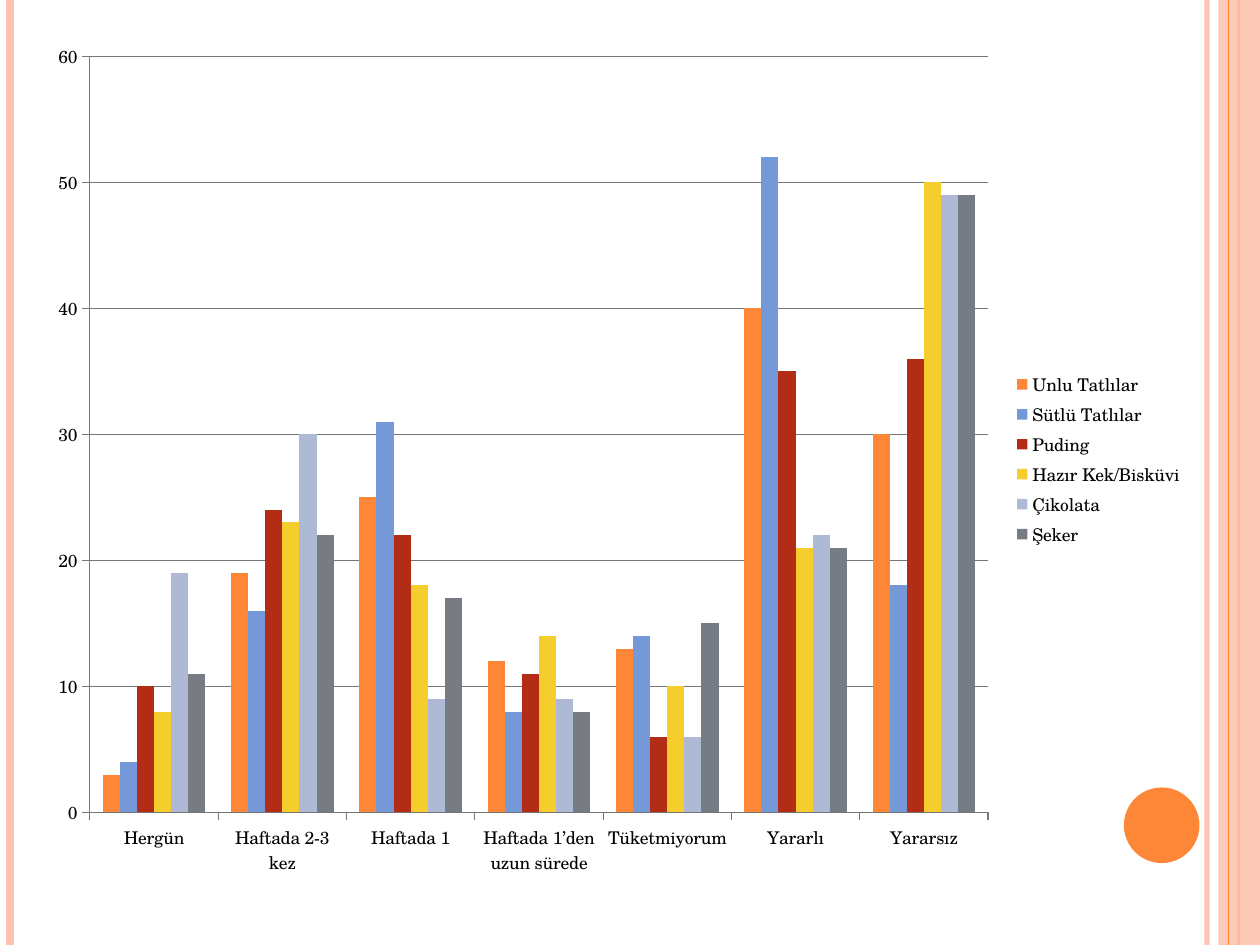
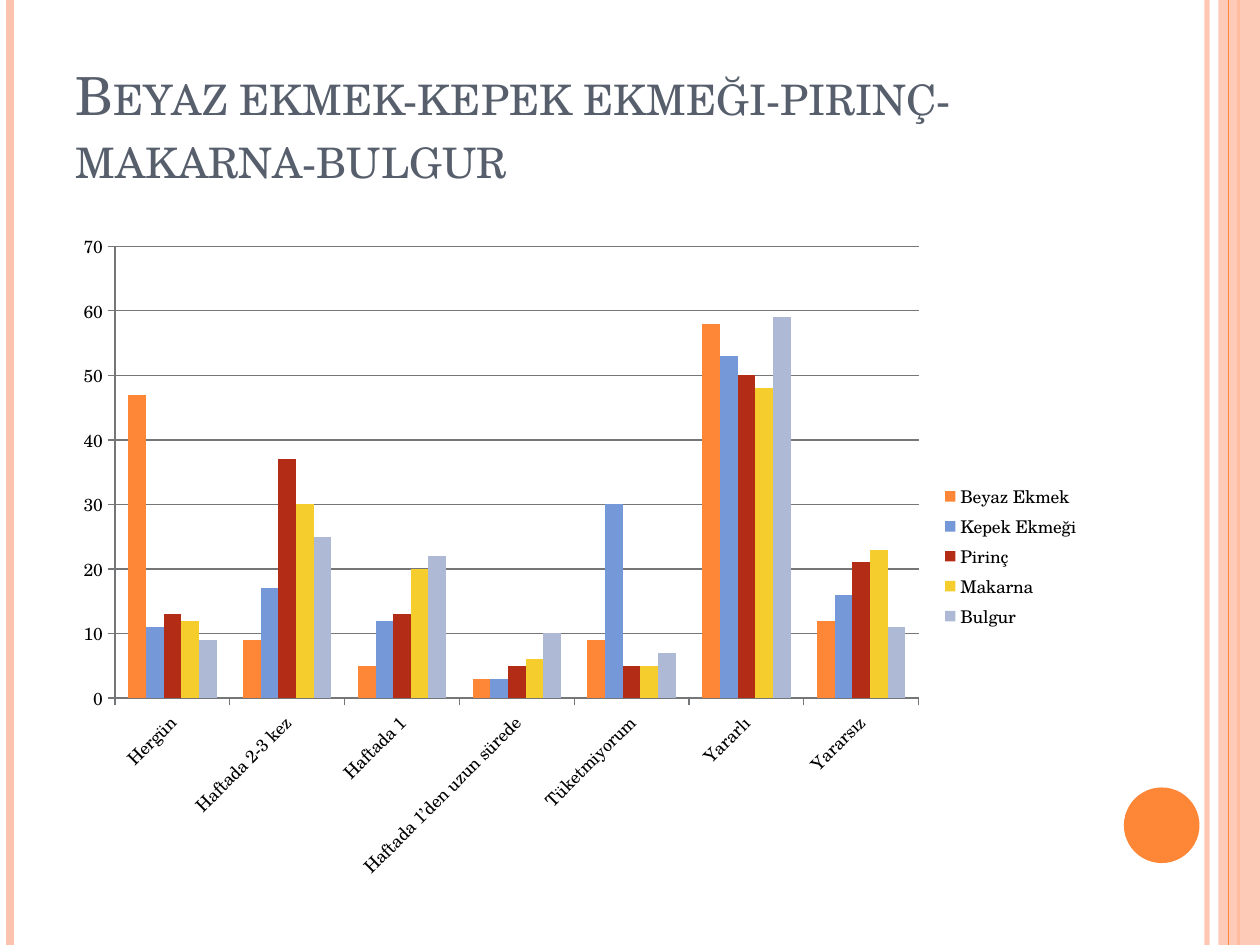
"""Build two slides with column charts of food consumption survey results."""
from lxml import etree
from pptx import Presentation
from pptx.chart.data import CategoryChartData
from pptx.dml.color import RGBColor
from pptx.enum.chart import XL_CHART_TYPE, XL_LEGEND_POSITION, XL_TICK_MARK
from pptx.enum.shapes import MSO_CONNECTOR, MSO_SHAPE
from pptx.enum.text import MSO_ANCHOR, MSO_AUTO_SIZE, PP_ALIGN
from pptx.oxml.ns import qn
from pptx.util import Inches, Pt

COLUMN = XL_CHART_TYPE.COLUMN_CLUSTERED
RIGHT = XL_LEGEND_POSITION.RIGHT
OUTSIDE = XL_TICK_MARK.OUTSIDE
STRAIGHT = MSO_CONNECTOR.STRAIGHT
RECTANGLE, OVAL = MSO_SHAPE.RECTANGLE, MSO_SHAPE.OVAL
BOTTOM, LEFT, NO_FIT = MSO_ANCHOR.BOTTOM, PP_ALIGN.LEFT, MSO_AUTO_SIZE.NONE

FONT = "TeX Gyre Schola"
COLORS = {
    "orange": "FE8637",
    "peach": "FEC3AE",
    "blue": "7598D9",
    "red": "B32C16",
    "yellow": "F5CD2D",
    "pale": "AEBAD5",
    "gray": "777C84",
    "title": "575F6D",
    "axis": "747678",
    "text": "000000",
}
SERIES_COLORS = ["orange", "blue", "red", "yellow", "pale", "gray"]
TITLE_ONLY, BLANK = 5, 6

CATEGORIES = ["Hergün", "Haftada 2-3 kez", "Haftada 1", "Haftada 1’den uzun sürede",
              "Tüketmiyorum", "Yararlı", "Yararsız"]
SWEETS = {
    "Unlu Tatlılar": [3, 19, 25, 12, 13, 40, 30],
    "Sütlü Tatlılar": [4, 16, 31, 8, 14, 52, 18],
    "Puding": [10, 24, 22, 11, 6, 35, 36],
    "Hazır Kek/Bisküvi": [8, 23, 18, 14, 10, 21, 50],
    "Çikolata": [19, 30, 9, 9, 6, 22, 49],
    "Şeker": [11, 22, 17, 8, 15, 21, 49],
}
GRAINS = {
    "Beyaz Ekmek": [47, 9, 5, 3, 9, 58, 12],
    "Kepek Ekmeği": [11, 17, 12, 3, 30, 53, 16],
    "Pirinç": [13, 37, 13, 5, 5, 50, 21],
    "Makarna": [12, 30, 20, 6, 5, 48, 23],
    "Bulgur": [9, 25, 22, 10, 7, 59, 11],
}


def rgb(name):
    """Return the named palette colour."""
    return RGBColor.from_string(COLORS[name])


def set_alpha(fill, percent):
    """Set the opacity of the solid colour inside an XML element."""
    color = next(fill.iter(qn("a:srgbClr")))
    etree.SubElement(color, qn("a:alpha")).set("val", str(percent * 1000))


def add_stripe(s, x, color, width, alpha=100):
    """Draw a full-height vertical line."""
    line = s.shapes.add_connector(STRAIGHT, Inches(x), 0, Inches(x), Inches(7.5))
    line.line.color.rgb = rgb(color)
    line.line.width = Pt(width)
    sp_pr = line._element.spPr
    if alpha < 100:
        set_alpha(sp_pr, alpha)
    etree.SubElement(sp_pr, qn("a:effectLst"))


def add_block(s, kind, box, color, alpha=100):
    """Draw a filled shape without outline or shadow."""
    sp = s.shapes.add_shape(kind, *map(Inches, box))
    sp.shadow.inherit = False
    sp.fill.solid()
    sp.fill.fore_color.rgb = rgb(color)
    sp.line.fill.background()
    if alpha < 100:
        set_alpha(sp._element.spPr, alpha)


def add_frame(s):
    """Draw the side stripes, the band and the circle shared by all slides."""
    add_stripe(s, 9.58, "peach", 3, 93)
    add_stripe(s, 0.08, "peach", 4.5)
    add_stripe(s, 9.83, "orange", 1.5)
    add_block(s, RECTANGLE, (9.67, 0, 0.33, 7.5), "peach", 87)
    add_stripe(s, 9.75, "orange", 0.75)
    add_block(s, OVAL, (8.92, 6.25, 0.6, 0.6), "orange")


def set_title(s, text):
    """Place and format the title in small capitals."""
    sp = s.shapes.title
    sp.left, sp.top, sp.width, sp.height = map(Inches, (0.5, 0.3, 8.17, 1.25))
    tf = sp.text_frame
    tf.text = text
    tf.word_wrap = True
    tf.auto_size = NO_FIT
    tf.vertical_anchor = BOTTOM
    p = tf.paragraphs[0]
    p.alignment = LEFT
    r = p.runs[0]
    r.font.name = FONT
    r.font.size = Pt(30)
    r.font.color.rgb = rgb("title")
    r.font._element.set("cap", "small")


def style_line(line):
    """Format an axis line or a gridline."""
    line.color.rgb = rgb("axis")
    line.width = Pt(0.75)


def add_column_chart(s, box, answers, label_angle=None):
    """Add a clustered column chart with a legend on the right."""
    data = CategoryChartData()
    data.categories = CATEGORIES
    for name, values in answers.items():
        data.add_series(name, values)
    chart = s.shapes.add_chart(COLUMN, *map(Inches, box), data).chart
    chart.has_title = False
    chart.font.name = FONT
    chart.font.size = Pt(10)
    chart.font.color.rgb = rgb("text")
    chart.has_legend = True
    chart.legend.position = RIGHT
    chart.legend.include_in_layout = False
    plot = chart.plots[0]
    plot.gap_width = 150
    plot.overlap = 0
    plot.vary_by_categories = False
    for series, color in zip(plot.series, SERIES_COLORS):
        series.format.fill.solid()
        series.format.fill.fore_color.rgb = rgb(color)
    for axis in (chart.category_axis, chart.value_axis):
        axis.major_tick_mark = OUTSIDE
        style_line(axis.format.line)
    chart.value_axis.has_major_gridlines = True
    style_line(chart.value_axis.major_gridlines.format.line)
    if label_angle is not None:
        labels = chart.category_axis.tick_labels
        labels.font.size = Pt(10)
        body = chart.category_axis._element.find(qn("c:txPr")).find(qn("a:bodyPr"))
        body.set("rot", str(label_angle * 60000))


def add_slide(prs, layout):
    """Add a slide with the shared frame."""
    s = prs.slides.add_slide(prs.slide_layouts[layout])
    add_frame(s)
    return s


def main():
    """Build and save the presentation."""
    prs = Presentation()
    prs.slide_width, prs.slide_height = Inches(10), Inches(7.5)

    s = add_slide(prs, BLANK)
    add_column_chart(s, (0.28, 0.21, 9.21, 6.87), SWEETS)

    s = add_slide(prs, TITLE_ONLY)
    set_title(s, "Beyaz ekmek-kepek ekmeği-pirinç-makarna-bulgur")
    add_column_chart(s, (0.5, 1.75, 8.17, 5.33), GRAINS, label_angle=-45)

    prs.save("out.pptx")


if __name__ == "__main__":
    main()
